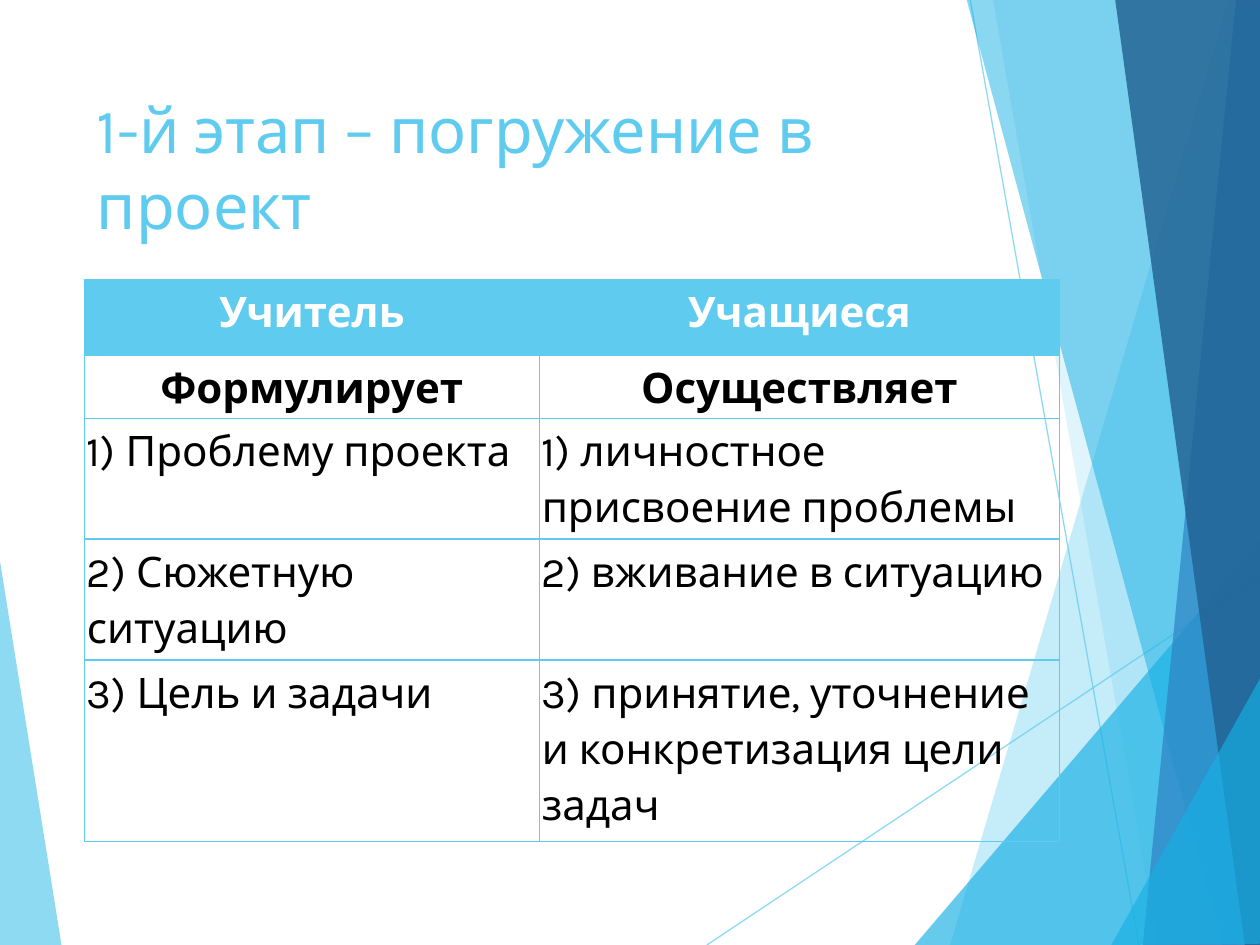
from lxml import etree
from pptx import Presentation
from pptx.dml.color import RGBColor
from pptx.enum import shapes, text
from pptx.oxml import ns
from pptx.util import Inches, Pt

SKY, CYAN, BLUE, NAVY = "5FCBEF", "17B0E4", "2E83C3", "226292"


def paint(color_format, color, opacity=100):
    """Set a solid colour; opacity is in percent."""
    color_format.rgb = RGBColor.from_string(color)
    if opacity < 100:
        for node in color_format._xFill.iter(ns.qn("a:srgbClr")):
            etree.SubElement(node, ns.qn("a:alpha"), val=str(opacity * 1000))


def write(frame, words, size, color, bold=False, align=text.PP_ALIGN.LEFT, spacing=1.0):
    frame.word_wrap = True
    para = frame.paragraphs[0]
    para.alignment = align
    para.line_spacing = spacing
    span = para.add_run()
    span.text = words
    span.font.name = "Karla"
    span.font.size = Pt(size)
    span.font.bold = bold
    paint(span.font.fill_color if hasattr(span.font, "fill_color") else span.font.color, color)


deck = Presentation()
deck.slide_width, deck.slide_height = Inches(10), Inches(7.5)
page = deck.slides.add_slide(deck.slide_layouts[6])

# Background facets: thin lines first, then translucent panes
for start, end in [((5.61, 7.5), (10.01, 4.57)), ((7.7, 0), (9.04, 7.5))]:
    line = page.shapes.add_connector(
        shapes.MSO_CONNECTOR.STRAIGHT, *[Inches(value) for value in start + end])
    line.line.width = Pt(0.75)
    line.line.fill.solid()
    line.line.color.rgb = RGBColor.from_string(SKY)
    for node in line._element.spPr.iter(ns.qn("a:srgbClr")):
        etree.SubElement(node, ns.qn("a:alpha"), val="70000")
    etree.SubElement(line._element.spPr, ns.qn("a:effectLst"))

facets = [
    (SKY, 70, [(-0.01, 4.39), (0.49, 7.51), (-0.01, 7.5)]),
    (SKY, 36, [(9.75, 0), (7.54, 7.5), (10.02, 7.51), (10.01, 0.01)]),
    (SKY, 20, [(7.88, -0.01), (9.19, 7.5), (10.01, 7.5), (10.01, -0.01)]),
    (CYAN, 66, [(7.26, 7.5), (10, 4.29), (10.01, 7.5)]),
    (CYAN, 50, [(7.67, -0.01), (9.7, 7.5), (10.01, 7.49), (10.01, -0.01)]),
    (BLUE, 70, [(9.81, -0.01), (9.07, 7.5), (10.01, 7.5), (10, -0.01)]),
    (NAVY, 82, [(8.85, -0.01), (9.88, 7.5), (10.02, 7.5), (10, -0.01)]),
    (CYAN, 66, [(8.82, 7.5), (10.02, 5.35), (10.02, 7.49)]),
]
for color, opacity, corners in facets:
    points = [(Inches(x), Inches(y)) for x, y in corners]
    builder = page.shapes.build_freeform(*points[0])
    builder.add_line_segments(points[1:], close=True)
    facet = builder.convert_to_shape()
    facet.shadow.inherit = False
    facet.line.fill.background()
    facet.fill.solid()
    paint(facet.fill.fore_color, color, opacity)

title = page.shapes.add_textbox(Inches(0.67), Inches(0.67), Inches(6.94), Inches(1.44))
write(title.text_frame, "1-й этап – погружение в проект", 36, SKY)

# Table of teacher and student roles
rows = [
    (0.6, "Учитель", "Учащиеся"),
    (0.48, "Формулирует", "Осуществляет"),
    (0.78, "1) Проблему проекта", "1) личностное присвоение проблемы"),
    (0.78, "2) Сюжетную ситуацию", "2) вживание в ситуацию"),
    (1.44, "3) Цель и задачи", "3) принятие, уточнение и конкретизация цели задач"),
]
table = page.shapes.add_table(
    len(rows), 2, Inches(0.67), Inches(2.22), Inches(7.74), Inches(4.08)).table
for column, width in zip(table.columns, (3.61, 4.13)):
    column.width = Inches(width)

for row_index, (height, *words) in enumerate(rows):
    table.rows[row_index].height = Inches(height)
    heading = row_index < 2
    for column_index, label in enumerate(words):
        cell = table.cell(row_index, column_index)
        cell.margin_left = cell.margin_right = Inches(0.02)
        cell.margin_top = cell.margin_bottom = Inches(0.02)
        write(cell.text_frame, label, 24, "FFFFFF" if row_index == 0 else "000000",
              bold=heading, spacing=1.15,
              align=text.PP_ALIGN.CENTER if heading else text.PP_ALIGN.LEFT)
        properties = cell._tc.get_or_add_tcPr()
        for side in ("lnL", "lnR", "lnT", "lnB"):
            border = etree.SubElement(properties, ns.qn(f"a:{side}"), w=str(Pt(1)))
            solid = etree.SubElement(border, ns.qn("a:solidFill"))
            etree.SubElement(solid, ns.qn("a:srgbClr"), val=SKY)
        if row_index == 0:
            cell.fill.solid()
            paint(cell.fill.fore_color, SKY)
        else:
            cell.fill.background()

deck.save("out.pptx")
